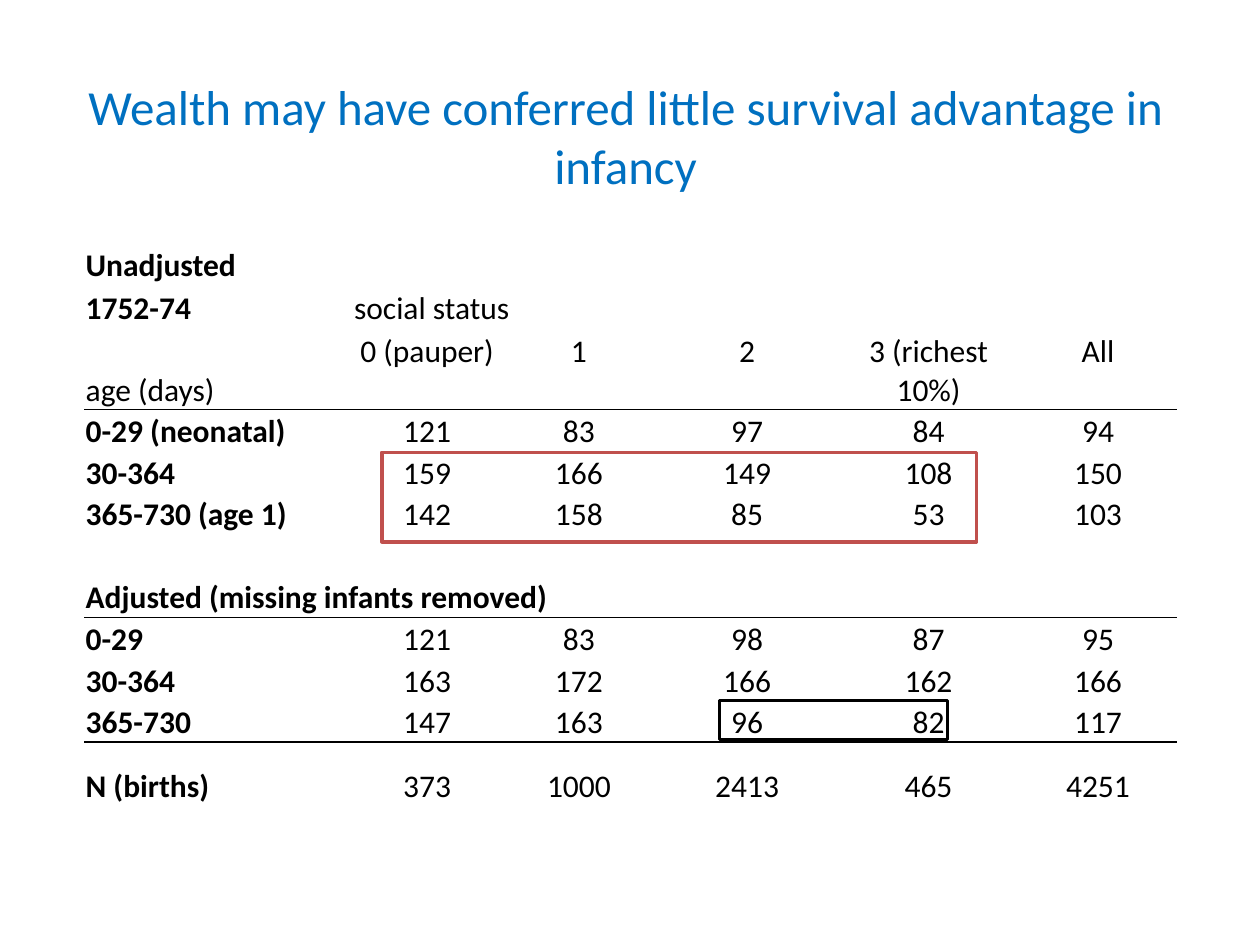
"""Build a slide comparing infant mortality by social status and age."""
from dataclasses import dataclass

import pptx
import pptx.dml.color
import pptx.enum.shapes
import pptx.enum.text
import pptx.oxml
import pptx.oxml.ns
import pptx.util

Inches = pptx.util.Inches
Pt = pptx.util.Pt
RGBColor = pptx.dml.color.RGBColor
Anchor = pptx.enum.text.MSO_ANCHOR
Align = pptx.enum.text.PP_ALIGN

TITLE_BLUE = RGBColor(0x00, 0x70, 0xC0)
BLACK = RGBColor(0x00, 0x00, 0x00)
WHITE = RGBColor(0xFF, 0xFF, 0xFF)
RED = RGBColor(0xC0, 0x50, 0x4D)
FONT = "Calibri"
NO_STYLE_NO_GRID = "{2D5ABB26-0587-4C30-8999-92F81FD0307C}"
COLUMN_WIDTHS = (2.13, 1.18, 1.23, 1.44, 1.44, 1.25)


@dataclass(frozen=True)
class Highlight:
    """A box behind the rates that stand out."""
    left: float
    top: float
    width: float
    height: float
    outline: RGBColor


@dataclass(frozen=True)
class Row:
    """One table row: a label, its values and its layout."""
    label: str = ""
    values: tuple[str, ...] = ()
    height: float = 0.33
    bold: bool = True
    centered: bool = True
    ruled: bool = False
    label_span: int = 1
    value_span: int = 1
    value_anchor: Anchor = Anchor.BOTTOM


HIGHLIGHTS = (
    Highlight(3.03, 3.59, 4.72, 0.71, RED),
    Highlight(5.71, 5.56, 1.81, 0.31, BLACK),
)
ROWS = (
    Row("Unadjusted", height=0.79, label_span=2),
    Row("1752-74", ("social status",), height=0.34, centered=False, value_span=2),
    Row("age (days)", ("0 (pauper)", "1", "2", "3 (richest 10%)", "All"),
        height=0.65, bold=False, ruled=True, value_anchor=Anchor.TOP),
    Row("0-29 (neonatal)", ("121", "83", "97", "84", "94")),
    Row("30-364", ("159", "166", "149", "108", "150")),
    Row("365-730 (age 1)", ("142", "158", "85", "53", "103")),
    Row(),
    Row("Adjusted (missing infants removed)", ruled=True, label_span=6),
    Row("0-29", ("121", "83", "98", "87", "95")),
    Row("30-364", ("163", "172", "166", "162", "166")),
    Row("365-730", ("147", "163", "96", "82", "117"), ruled=True),
    Row("N (births)", ("373", "1000", "2413", "465", "4251"), height=0.51),
)


def add_title(slide, wording: str) -> None:
    """Place and format the title."""
    title = slide.shapes.title
    title.left, title.top = Inches(0.43), Inches(0.45)
    title.width, title.height = Inches(9.07), Inches(1.25)
    title.text_frame.text = wording
    title.text_frame.vertical_anchor = Anchor.MIDDLE
    heading = title.text_frame.paragraphs[0]
    heading.alignment = Align.CENTER
    font = heading.runs[0].font
    font.name, font.size = FONT, Pt(28)
    font.color.rgb = TITLE_BLUE


def add_highlight(slide, highlight: Highlight) -> None:
    """Draw one outlined box."""
    box = slide.shapes.add_shape(
        pptx.enum.shapes.MSO_SHAPE.RECTANGLE,
        Inches(highlight.left), Inches(highlight.top),
        Inches(highlight.width), Inches(highlight.height))
    box.shadow.inherit = False
    box.fill.solid()
    box.fill.fore_color.rgb = WHITE
    box.line.color.rgb = highlight.outline
    box.line.width = Pt(2)


def rule_below(cell) -> None:
    """Draw a black line along the bottom of a cell."""
    border = pptx.oxml.parse_xml(
        f'<a:lnB {pptx.oxml.ns.nsdecls("a")} w="{Pt(1)}">'
        f'<a:solidFill><a:srgbClr val="{BLACK}"/></a:solidFill></a:lnB>')
    cell._tc.get_or_add_tcPr().insert(0, border)


def write_cell(cell, wording: str, bold: bool, centered: bool, anchor: Anchor) -> None:
    """Fill a cell with formatted text."""
    cell.text_frame.text = wording
    cell.vertical_anchor = anchor
    paragraph = cell.text_frame.paragraphs[0]
    paragraph.alignment = Align.CENTER if centered else Align.LEFT
    for run in paragraph.runs:
        run.font.name, run.font.size, run.font.bold = FONT, Pt(18), bold
        run.font.color.rgb = BLACK


def fill_row(mortality, index: int, row: Row) -> None:
    """Lay out and write one table row."""
    mortality.rows[index].height = Inches(row.height)
    cells = [mortality.cell(index, column) for column in range(len(COLUMN_WIDTHS))]
    for cell in cells:
        cell.margin_left = cell.margin_right = cell.margin_top = Inches(0.01)
        cell.margin_bottom = 0
        cell.fill.background()
        if row.ruled:
            rule_below(cell)
    if row.label_span > 1:
        cells[0].merge(cells[row.label_span - 1])
    if row.value_span > 1:
        cells[1].merge(cells[row.value_span])
    if row.label:
        write_cell(cells[0], row.label, row.bold, False, Anchor.BOTTOM)
    for cell, value in zip(cells[1:], row.values):
        write_cell(cell, value, False, row.centered, row.value_anchor)
        if row.value_anchor == Anchor.TOP:
            cell.margin_top = Inches(0.04)


def add_mortality_table(slide) -> None:
    """Add the table of mortality rates."""
    mortality = slide.shapes.add_table(
        len(ROWS), len(COLUMN_WIDTHS), Inches(0.67), Inches(1.47),
        Inches(sum(COLUMN_WIDTHS)), Inches(sum(row.height for row in ROWS))).table
    mortality.first_row = mortality.horz_banding = False
    style = mortality._tbl.tblPr.find(pptx.oxml.ns.qn("a:tableStyleId"))
    style.text = NO_STYLE_NO_GRID
    for column, width in zip(mortality.columns, COLUMN_WIDTHS):
        column.width = Inches(width)
    for index, row in enumerate(ROWS):
        fill_row(mortality, index, row)


def main() -> None:
    """Build and save the presentation."""
    presentation = pptx.Presentation()
    presentation.slide_width, presentation.slide_height = Inches(10), Inches(7.5)
    slide = presentation.slides.add_slide(presentation.slide_layouts[5])
    add_title(slide, "Wealth may have conferred little survival advantage in infancy")
    for highlight in HIGHLIGHTS:
        add_highlight(slide, highlight)
    add_mortality_table(slide)
    presentation.save("out.pptx")


if __name__ == "__main__":
    main()
